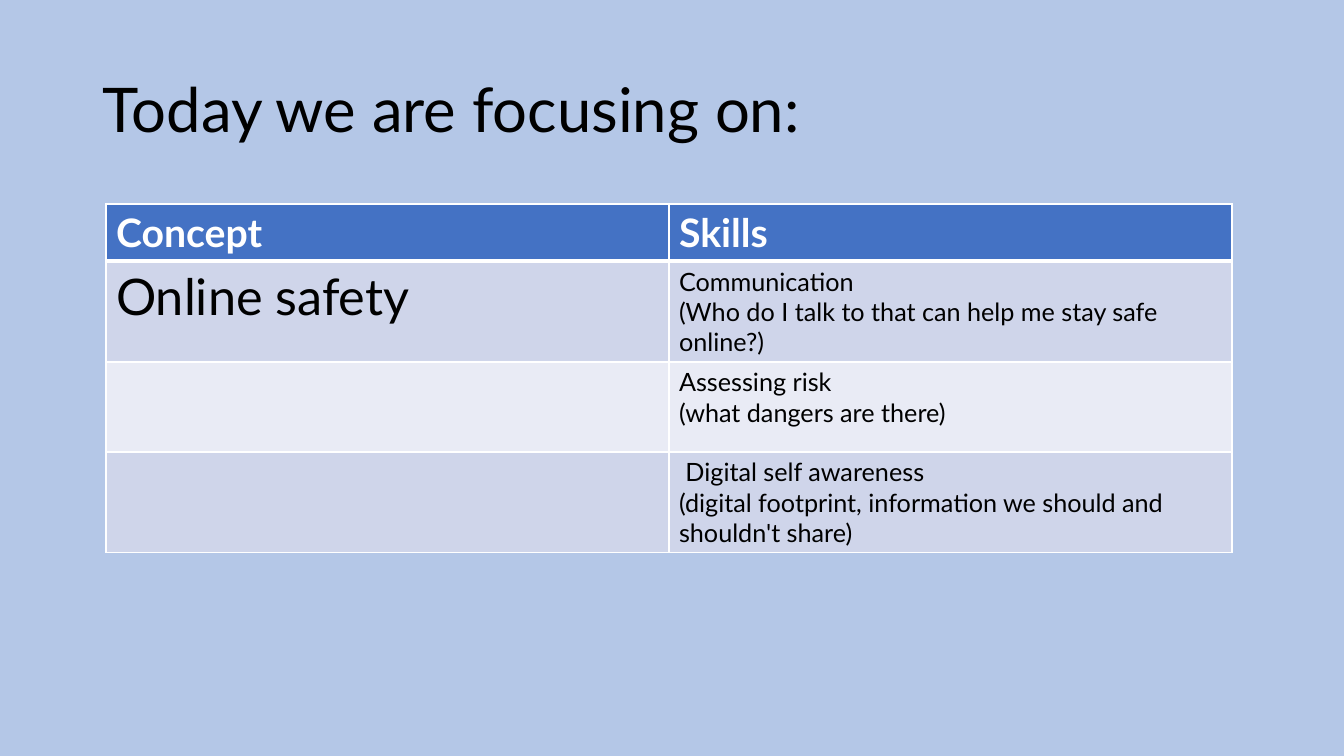
from lxml import etree
from pptx import Presentation
from pptx import util as u
from pptx.dml.color import RGBColor
from pptx.enum import text
from pptx.oxml.ns import qn

TITLE = "Today we are focusing on:"
HEADINGS = ("Concept", "Skills")
FOCUS_ROWS = [
    ("Online safety",
     "Communication\n(Who do I talk to that can help me stay safe online?)"),
    ("", "Assessing risk\n(what dangers are there)"),
    ("", " Digital self awareness\n"
         "(digital footprint, information we should and shouldn't share)"),
]

THEME = {
    "font": "Lato",
    "background": "B4C7E7",
    "header": "4472C4",
    "bands": ("CFD5EA", "E9EBF5"),
    "border": "FFFFFF",
    "title": {"size": 44, "color": "000000", "bold": False},
    "heading": {"size": 28, "color": "FFFFFF", "bold": True},
    "concept": {"size": 36, "color": "000000", "bold": False},
    "skill": {"size": 18, "color": "000000", "bold": False},
}

SLIDE_W, SLIDE_H = 1344, 756
TITLE_BOX = (93, 40, 1159, 146)
TABLE_LEFT, TABLE_TOP = 106, 204
COLUMN_W = 563
HEADER_H, FOCUS_H = 38, 90
THIN, THICK = 1, 3


def px(length):
    return u.Emu(round(length * 914400 / 100.8))


def write(frame, words, style):
    """Fill a text frame, one paragraph per line of words."""
    frame.text = words
    for paragraph in frame.paragraphs:
        font = paragraph.font
        targets = [font] + [run.font for run in paragraph.runs]
        formats = {"name": THEME["font"], "size": u.Pt(style["size"]),
                   "bold": style["bold"]}
        for font in targets:
            for name, value in formats.items():
                setattr(font, name, value)
            font.color.rgb = RGBColor.from_string(style["color"])


def add_borders(cell, widths):
    """Draw the left, right, top and bottom borders, widths in points."""
    properties = cell._tc.get_or_add_tcPr()
    for side, width in zip("LRTB", widths):
        line = etree.SubElement(properties, qn(f"a:ln{side}"), w=str(u.Pt(width)))
        fill = etree.SubElement(line, qn("a:solidFill"))
        etree.SubElement(fill, qn("a:srgbClr"), val=THEME["border"])


def add_title(slide):
    frame = slide.shapes.add_textbox(*map(px, TITLE_BOX)).text_frame
    frame.word_wrap = True
    frame.vertical_anchor = text.MSO_ANCHOR.MIDDLE
    write(frame, TITLE, THEME["title"])
    frame.paragraphs[0].line_spacing = 0.9


def add_focus_table(slide):
    rows = [HEADINGS] + FOCUS_ROWS
    heights = [HEADER_H] + [FOCUS_H] * len(FOCUS_ROWS)
    table = slide.shapes.add_table(
        len(rows), len(HEADINGS), px(TABLE_LEFT), px(TABLE_TOP),
        px(COLUMN_W * len(HEADINGS)), px(sum(heights))).table
    table.horz_banding = False
    for column in table.columns:
        column.width = px(COLUMN_W)

    for r, (row, height) in enumerate(zip(rows, heights)):
        table.rows[r].height = px(height)
        color = THEME["bands"][(r - 1) % 2] if r else THEME["header"]
        top = THICK if r == 1 else THIN
        bottom = THICK if r == 0 else THIN
        for c, words in enumerate(row):
            cell = table.cell(r, c)
            add_borders(cell, (THIN, THIN, top, bottom))
            cell.fill.solid()
            cell.fill.fore_color.rgb = RGBColor.from_string(color)
            if words:
                kind = "heading" if r == 0 else ("concept", "skill")[c]
                write(cell.text_frame, words, THEME[kind])


def main():
    deck = Presentation()
    deck.slide_width, deck.slide_height = px(SLIDE_W), px(SLIDE_H)
    slide = deck.slides.add_slide(deck.slide_layouts[6])
    slide.background.fill.solid()
    slide.background.fill.fore_color.rgb = RGBColor.from_string(THEME["background"])
    add_title(slide)
    add_focus_table(slide)
    deck.save("out.pptx")


if __name__ == "__main__":
    main()
